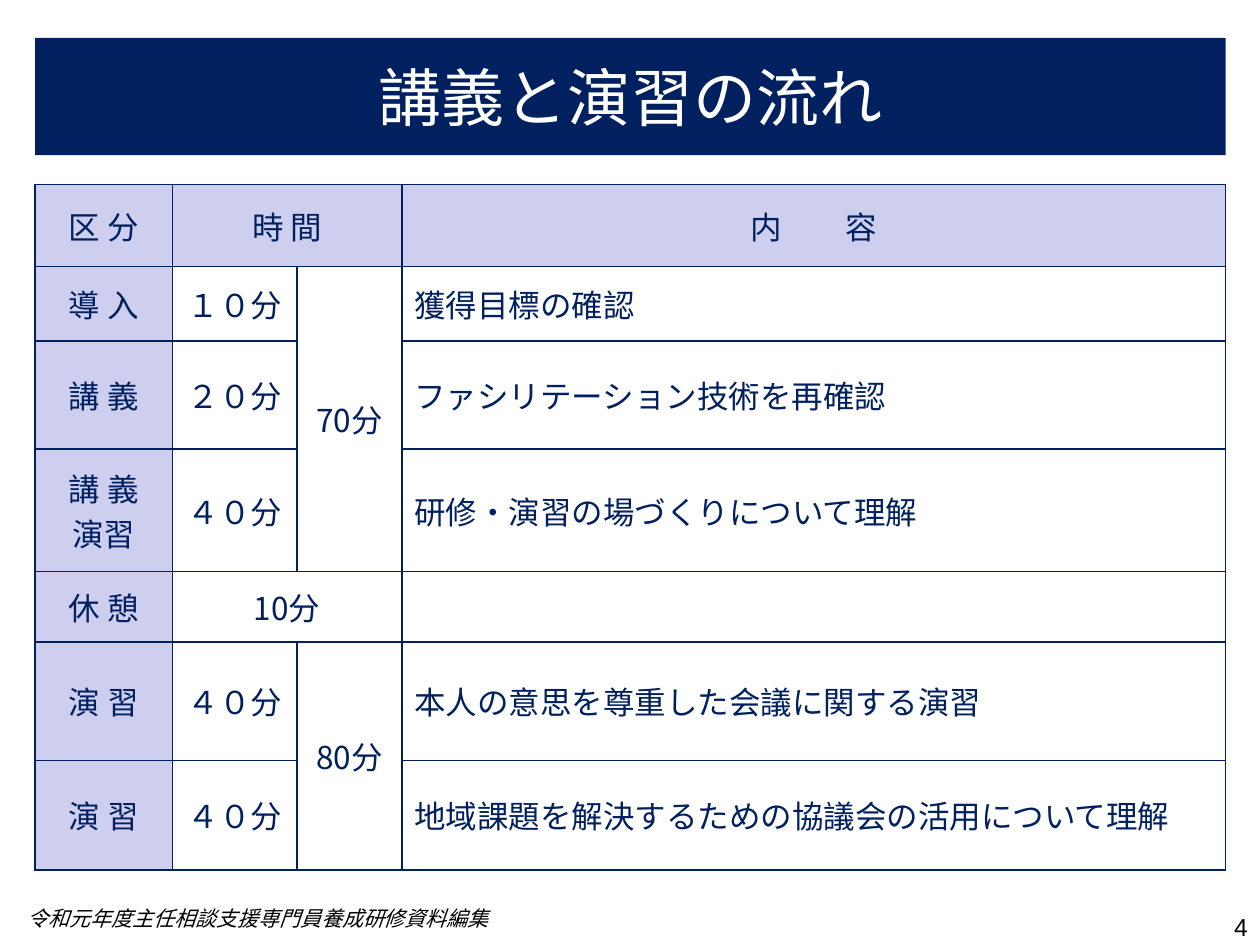
"""Build the slide that shows the flow of lectures and exercises as a timetable."""
import pptx
import pptx.util
import pptx.dml.color
import pptx.enum.text
import pptx.oxml
import pptx.oxml.ns
from lxml import etree

Pt = pptx.util.Pt
ALIGN = pptx.enum.text.PP_ALIGN
MID = pptx.enum.text.MSO_ANCHOR.MIDDLE

THEME = {
    "navy": "002060", "lilac": "CECEEF", "white": "FFFFFF", "black": "000000",
    "font": "Noto Sans CJK JP", "plain": "Arial",
    "title": 36, "body": 18, "page": 14, "note": 12, "line": 1,
}
TITLE = "講義と演習の流れ"
NOTE = "令和元年度主任相談支援専門員養成研修資料編集"
PAGE = "4"
ROWS = [
    ("区 分", "時 間", "", "内　　容"),
    ("導 入", "１０分", "70分", "獲得目標の確認"),
    ("講 義", "２０分", "", "ファシリテーション技術を再確認"),
    ("講 義\n演習", "４０分", "", "研修・演習の場づくりについて理解"),
    ("休 憩", "10分", "", ""),
    ("演 習", "４０分", "80分", "本人の意思を尊重した会議に関する演習"),
    ("演 習", "４０分", "", "地域課題を解決するための協議会の活用について理解"),
]
MERGES = [((0, 1), (0, 2)), ((1, 2), (3, 2)), ((4, 1), (4, 2)), ((5, 2), (6, 2))]
WIDTHS = [78.5, 71.3, 59.8, 470.8]
HEIGHTS = [46.8, 42.5, 61.9, 69.8, 40.3, 67.7, 62.6]
LEFT, WIDE = 20, sum(WIDTHS)


def color(name):
    return pptx.dml.color.RGBColor.from_string(THEME[name])


def write(frame, text, size="body", ink="navy", font="font", align=ALIGN.CENTER, slant=False):
    frame.text = text
    for para in frame.paragraphs:
        para.alignment = align
        for run in para.runs:
            run.font.size = Pt(THEME[size])
            run.font.name = THEME[font]
            run.font.italic = slant
            run.font.color.rgb = color(ink)
            east = etree.SubElement(run.font._element, pptx.oxml.ns.qn("a:ea"))
            east.set("typeface", THEME[font])


def border(cell):
    props = cell._tc.get_or_add_tcPr()
    for side in "LRTB":
        props.append(pptx.oxml.parse_xml(
            f'<a:ln{side} {pptx.oxml.ns.nsdecls("a")} w="{Pt(THEME["line"])}">'
            f'<a:solidFill><a:srgbClr val="{THEME["navy"]}"/></a:solidFill></a:ln{side}>'))


def head(slide):
    title = slide.shapes.title
    title.left, title.top, title.width, title.height = Pt(LEFT), Pt(21.6), Pt(WIDE), Pt(67)
    title.fill.solid()
    title.fill.fore_color.rgb = color("navy")
    title.text_frame.vertical_anchor = MID
    write(title.text_frame, TITLE, size="title", ink="white")


def grid(slide):
    table = slide.shapes.add_table(len(ROWS), len(WIDTHS), Pt(LEFT), Pt(105.5),
                                   Pt(WIDE), Pt(sum(HEIGHTS))).table
    table.first_row = table.horz_banding = False
    for col, width in zip(table.columns, WIDTHS):
        col.width = Pt(width)
    for row, height in zip(table.rows, HEIGHTS):
        row.height = Pt(height)
    for r, texts in enumerate(ROWS):
        for c, text in enumerate(texts):
            cell = table.cell(r, c)
            border(cell)
            cell.fill.solid()
            cell.fill.fore_color.rgb = color("lilac" if r == 0 or c == 0 else "white")
            cell.vertical_anchor = MID
            write(cell.text_frame, text, align=ALIGN.LEFT if r and c == 3 else ALIGN.CENTER)
    for start, end in MERGES:
        table.cell(*start).merge(table.cell(*end))


def label(slide, text, left, top, width, height, **style):
    box = slide.shapes.add_textbox(Pt(left), Pt(top), Pt(width), Pt(height))
    box.text_frame.word_wrap = True
    write(box.text_frame, text, ink="black", **style)


def main():
    deck = pptx.Presentation()
    deck.slide_width, deck.slide_height = Pt(720), Pt(540)
    slide = deck.slides.add_slide(deck.slide_layouts[5])
    head(slide)
    label(slide, NOTE, 8.6, 514, 283.7, 21.8, size="note", align=ALIGN.LEFT, slant=True)
    grid(slide)
    label(slide, PAGE, 552, 517.7, 168, 21, size="page", font="plain", align=ALIGN.RIGHT)
    deck.save("out.pptx")


if __name__ == "__main__":
    main()
